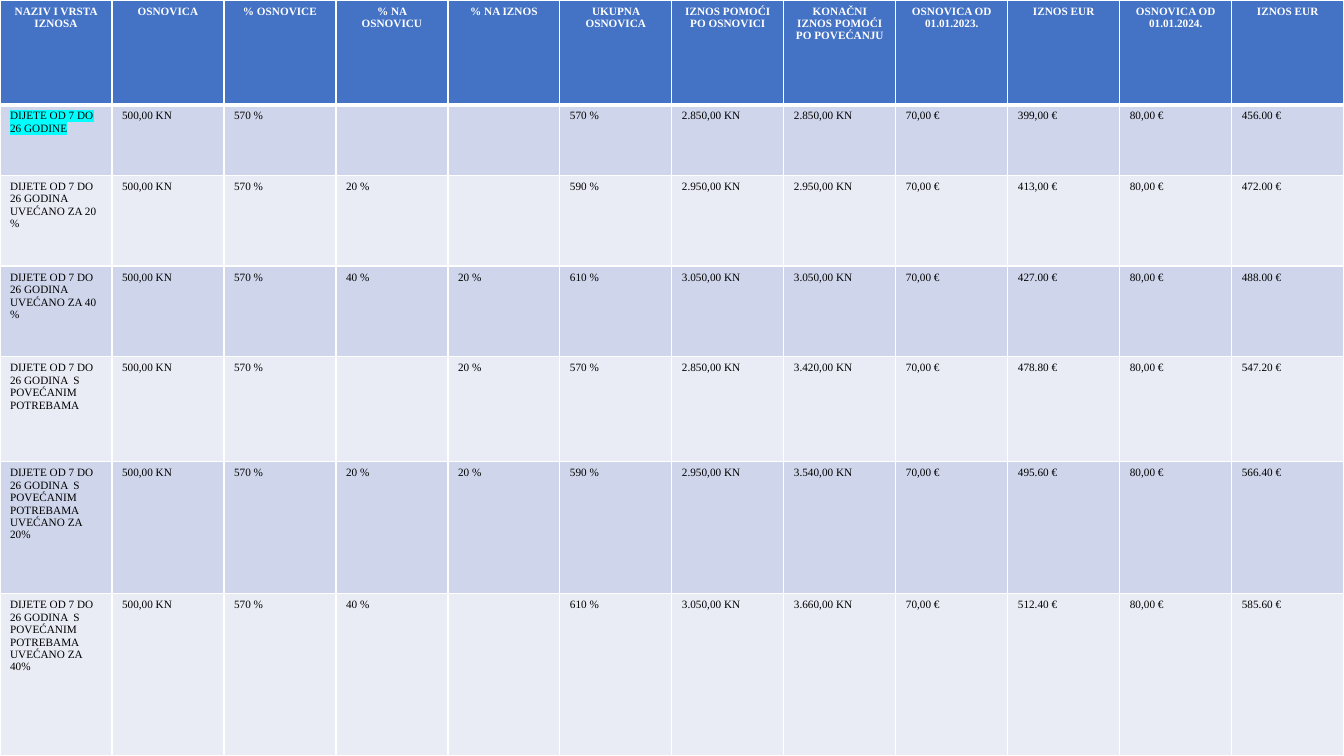
"""Build a slide with a table of aid amounts by type of beneficiary."""
from dataclasses import dataclass

from lxml import etree
from pptx import Presentation
from pptx import util as u
from pptx.dml.color import RGBColor
from pptx.enum import text
from pptx.oxml import ns


@dataclass(frozen=True)
class Theme:
    """Colours and type of the slide."""
    font: str = "Times New Roman"
    size: float = 8
    header_fill: str = "4472C4"
    header_text: str = "FFFFFF"
    body_text: str = "000000"
    bands: tuple[str, str] = ("CFD5EA", "E9EBF5")
    border: str = "FFFFFF"
    thin: float = 1
    thick: float = 3
    highlight: str = "00FFFF"


@dataclass(frozen=True)
class Aid:
    """One row of the table, with its height as a share of the slide."""
    height: float
    name: str
    base_increase: str
    amount_increase: str
    total_base: str
    amount: str
    final_amount: str
    eur_2023: str
    eur_2024: str
    highlighted: bool = False

    def values(self) -> list[str]:
        """Return the texts of the row in column order."""
        return [self.name, "500,00 KN", "570 %", self.base_increase, self.amount_increase,
                self.total_base, self.amount, self.final_amount,
                "70,00 €", self.eur_2023, "80,00 €", self.eur_2024]


THEME = Theme()
WIDTH, HEIGHT = u.Inches(13.33), u.Inches(7.5)
HEADER_HEIGHT = 1.04 / 7.5
HEADERS = [
    "NAZIV I VRSTA IZNOSA", "OSNOVICA", "% OSNOVICE", "% NA OSNOVICU", "% NA IZNOS",
    "UKUPNA OSNOVICA", "IZNOS POMOĆI PO OSNOVICI", "KONAČNI IZNOS POMOĆI PO POVEĆANJU",
    "OSNOVICA OD 01.01.2023.", "IZNOS EUR", "OSNOVICA OD 01.01.2024.", "IZNOS EUR",
]
AIDS = [
    Aid(0.7 / 7.5, "DIJETE OD 7 DO 26 GODINE", "", "", "570 %",
        "2.850,00 KN", "2.850,00 KN", "399,00 €", "456.00 €", highlighted=True),
    Aid(0.9 / 7.5, "DIJETE OD 7 DO 26 GODINA UVEĆANO ZA 20 %", "20 %", "", "590 %",
        "2.950,00 KN", "2.950,00 KN", "413,00 €", "472.00 €"),
    Aid(0.9 / 7.5, "DIJETE OD 7 DO 26 GODINA UVEĆANO ZA 40 %", "40 %", "20 %", "610 %",
        "3.050,00 KN", "3.050,00 KN", "427.00 €", "488.00 €"),
    Aid(1.04 / 7.5, "DIJETE OD 7 DO 26 GODINA  S POVEĆANIM POTREBAMA", "", "20 %", "570 %",
        "2.850,00 KN", "3.420,00 KN", "478.80 €", "547.20 €"),
    Aid(1.31 / 7.5, "DIJETE OD 7 DO 26 GODINA  S POVEĆANIM POTREBAMA UVEĆANO ZA 20%",
        "20 %", "20 %", "590 %", "2.950,00 KN", "3.540,00 KN", "495.60 €", "566.40 €"),
    Aid(1.61 / 7.5, "DIJETE OD 7 DO 26 GODINA  S POVEĆANIM POTREBAMA UVEĆANO ZA 40%",
        "40 %", "", "610 %", "3.050,00 KN", "3.660,00 KN", "512.40 €", "585.60 €"),
]


def add_color(parent, tag: str, color: str):
    """Add an element that holds one RGB colour."""
    holder = etree.SubElement(parent, ns.qn(tag))
    etree.SubElement(holder, ns.qn("a:srgbClr"), val=color)
    return holder


def draw_borders(cell, top: float, bottom: float) -> None:
    """Draw the four borders of a cell."""
    properties = cell._tc.get_or_add_tcPr()
    for side, points in zip("LRTB", (THEME.thin, THEME.thin, top, bottom)):
        line = etree.SubElement(properties, ns.qn(f"a:ln{side}"), w=str(u.Pt(points)))
        add_color(line, "a:solidFill", THEME.border)


def write_cell(cell, words: str, header: bool, highlighted: bool) -> None:
    """Write one run of text into a cell."""
    para = cell.text_frame.paragraphs[0]
    para.alignment = text.PP_ALIGN.CENTER if header else text.PP_ALIGN.LEFT
    para.font.size = u.Pt(THEME.size)
    if not words:
        return
    span = para.add_run()
    span.text = words
    span.font.size = u.Pt(THEME.size)
    span.font.bold = header
    span.font.color.rgb = RGBColor.from_string(
        THEME.header_text if header else THEME.body_text)
    if highlighted:
        add_color(span.font._element, "a:highlight", THEME.highlight)
    span.font.name = THEME.font


def draw_row(table, index: int, height: float, values: list[str],
             highlighted: bool = False) -> None:
    """Fill and format one row of the table."""
    header = index == 0
    table.rows[index].height = round(HEIGHT * height)
    color = THEME.header_fill if header else THEME.bands[(index - 1) % 2]
    for column, words in enumerate(values):
        cell = table.cell(index, column)
        draw_borders(cell, top=THEME.thick if index == 1 else THEME.thin,
                     bottom=THEME.thick if header else THEME.thin)
        cell.fill.solid()
        cell.fill.fore_color.rgb = RGBColor.from_string(color)
        write_cell(cell, words, header, highlighted and column == 0)


def main() -> None:
    """Build and save the deck."""
    deck = Presentation()
    deck.slide_width, deck.slide_height = WIDTH, HEIGHT
    page = deck.slides.add_slide(deck.slide_layouts[6])
    table = page.shapes.add_table(
        len(AIDS) + 1, len(HEADERS), 0, 0, WIDTH, HEIGHT).table
    draw_row(table, 0, HEADER_HEIGHT, HEADERS)
    for index, aid in enumerate(AIDS, start=1):
        draw_row(table, index, aid.height, aid.values(), aid.highlighted)
    deck.save("out.pptx")


if __name__ == "__main__":
    main()
